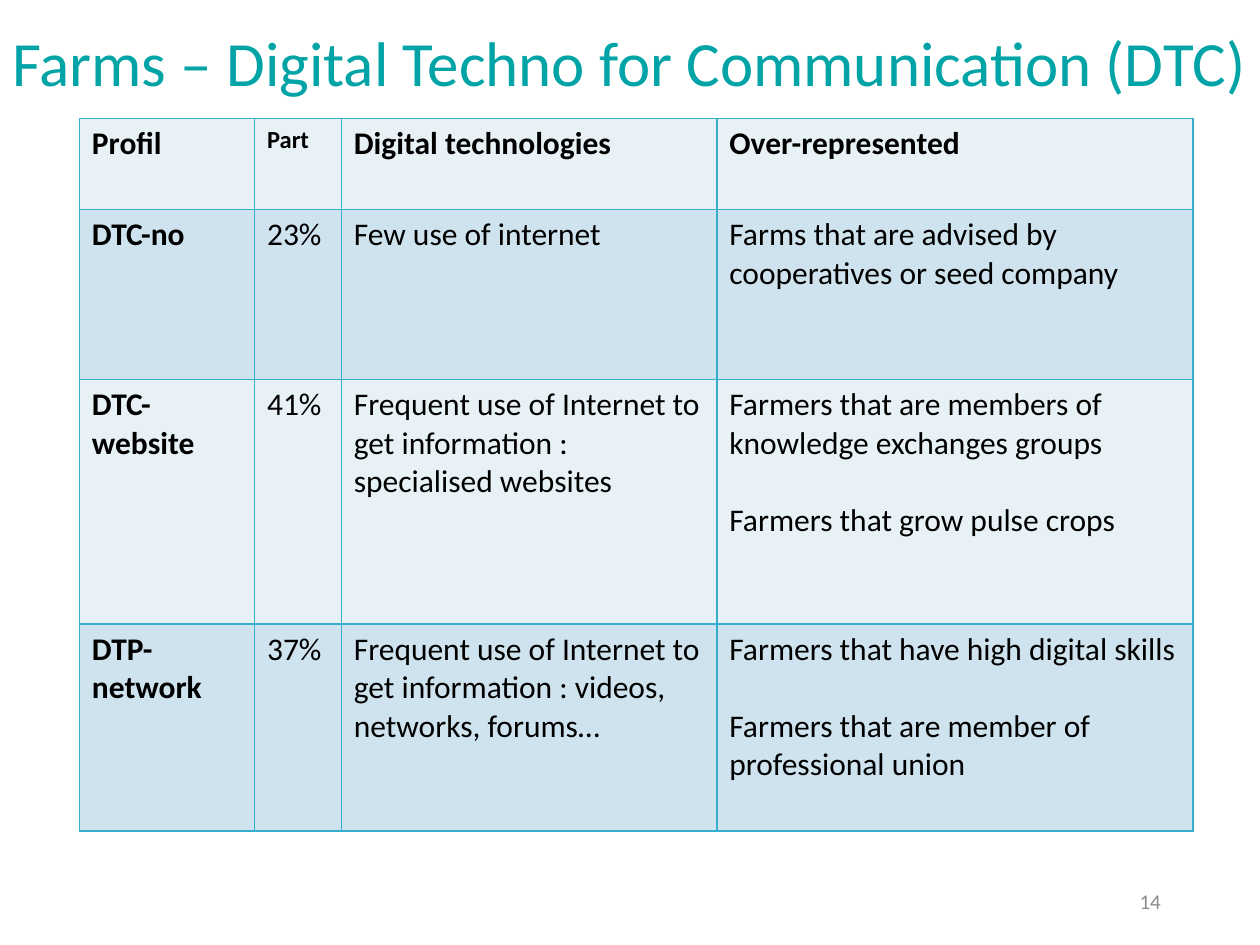
from typing import NamedTuple

from lxml import etree
from pptx import Presentation
from pptx.dml.color import RGBColor as RGB
from pptx.enum.text import MSO_ANCHOR as Anchor, PP_ALIGN as Align
from pptx.oxml.ns import qn
from pptx.util import Cm, Pt

TEAL = RGB(0x00, 0xA3, 0xA6)
GREY = RGB(0x8C, 0x8C, 0x8C)
BLACK = RGB(0x00, 0x00, 0x00)
BORDER = RGB(0x36, 0xAF, 0xCE)
BANDS = (RGB(0xE8, 0xF2, 0xF6), RGB(0xCE, 0xE3, 0xED))

COL_WIDTHS = (3.53, 1.75, 7.57, 9.6)
ROW_HEIGHTS = (1.83, 3.43, 4.93, 4.17)
LINE_GAP = 22  # one line of body text, in points


class Profile(NamedTuple):
    name: str
    part: str
    technologies: str
    over_represented: tuple[str, ...]


HEADER = Profile("Profil", "Part", "Digital technologies", ("Over-represented",))
PROFILES = (
    Profile("DTC-no", "23%", "Few use of internet",
            ("Farms that are advised by cooperatives or seed company",)),
    Profile("DTC-website", "41%",
            "Frequent use of Internet to get information : specialised websites",
            ("Farmers that are members of knowledge exchanges groups",
             "Farmers that grow pulse crops")),
    Profile("DTP-network", "37%",
            "Frequent use of Internet to get information : videos, networks, forums…",
            ("Farmers that have high digital skills",
             "Farmers that are member of professional union")),
)


def write(tf, *texts: str, size: int = 18, color: RGB = BLACK, bold: bool = False,
          align: Align = Align.LEFT, gap: int = 0) -> None:
    """Write one paragraph per text, with a gap between paragraphs."""
    for i, text in enumerate(texts):
        p = tf.paragraphs[0] if i == 0 else tf.add_paragraph()
        p.alignment = align
        if i:
            p.space_before = Pt(gap)
        r = p.add_run()
        r.text = text
        r.font.name, r.font.size, r.font.bold = "Calibri", Pt(size), bold
        r.font.color.rgb = color


def add_text(s, left: float, top: float, width: float, height: float,
             text: str, **fmt):
    tf = s.shapes.add_textbox(Cm(left), Cm(top), Cm(width), Cm(height)).text_frame
    tf.word_wrap = True
    tf.vertical_anchor = Anchor.MIDDLE
    write(tf, text, **fmt)
    return tf


def style_cell(cell, fill: RGB) -> None:
    tc_pr = cell._tc.get_or_add_tcPr()
    for side in ("a:lnL", "a:lnR", "a:lnT", "a:lnB"):
        ln = etree.SubElement(tc_pr, qn(side), w=str(Pt(1)))
        solid = etree.SubElement(ln, qn("a:solidFill"))
        etree.SubElement(solid, qn("a:srgbClr"), val=str(BORDER))
    cell.fill.solid()
    cell.fill.fore_color.rgb = fill


def add_profile_table(s, left: float, top: float) -> None:
    rows = (HEADER, *PROFILES)
    table = s.shapes.add_table(len(rows), len(COL_WIDTHS), Cm(left), Cm(top),
                               Cm(sum(COL_WIDTHS)), Cm(sum(ROW_HEIGHTS))).table
    table.first_row = table.horz_banding = False
    for col, width in zip(table.columns, COL_WIDTHS):
        col.width = Cm(width)
    for i, (profile, height) in enumerate(zip(rows, ROW_HEIGHTS)):
        table.rows[i].height = Cm(height)
        for j, value in enumerate(profile):
            cell = table.cell(i, j)
            style_cell(cell, BANDS[i % 2])
            texts = (value,) if isinstance(value, str) else value
            write(cell.text_frame, *texts, size=14 if (i, j) == (0, 1) else 18,
                  bold=i == 0 or j == 0, gap=LINE_GAP)


def main() -> None:
    prs = Presentation()
    prs.slide_width, prs.slide_height = Cm(25.4), Cm(19.05)
    s = prs.slides.add_slide(prs.slide_layouts[6])

    # Slide number
    add_text(s, 17.93, 17.65, 5.72, 1.02, "14", size=12, color=GREY, align=Align.RIGHT)

    # Profiles
    add_profile_table(s, 1.6, 2.39)

    # Title
    title = add_text(s, 0, 0, 25.4, 2.67,
                     "Farms – Digital Techno for Communication (DTC)",
                     size=36, color=TEAL)
    title.paragraphs[0].line_spacing = 0.9

    prs.save("out.pptx")


if __name__ == "__main__":
    main()
